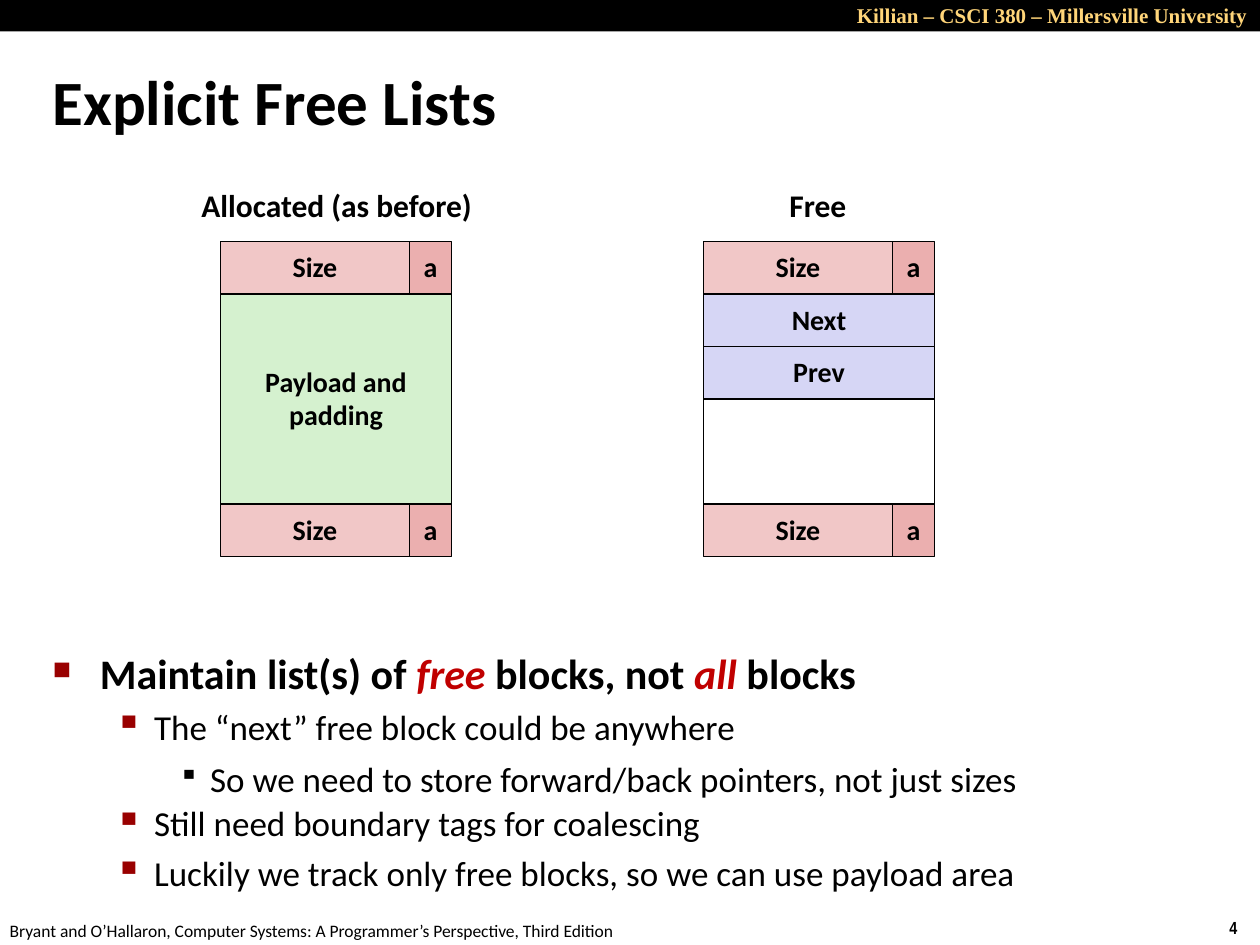
import pptx
import pptx.dml.color
import pptx.enum.shapes
import pptx.enum.text
import pptx.oxml.ns
import pptx.util
from lxml import etree

Pt = pptx.util.Pt
ALIGN = pptx.enum.text.PP_ALIGN
MIDDLE = pptx.enum.text.MSO_ANCHOR.MIDDLE

BLACK, RED, BULLET = "000000", "C00000", "990000"
PINK, ROSE, GREEN, LILAC, WHITE = "F1C7C7", "EBAFAF", "D5F1CF", "D6D6F5", "FFFFFF"


def color(value):
    return pptx.dml.color.RGBColor.from_string(value)


class SlideWriter:
    font = "Calibri"
    row, size_width, tag_width = 30, 108, 24

    def __init__(self, prs):
        self.slide = prs.slides.add_slide(prs.slide_layouts[6])

    def format_run(self, r, size, fill=BLACK, bold=False, italic=False, font=None):
        r.font.name = font or self.font
        r.font.size = Pt(size)
        r.font.bold = bold
        r.font.italic = italic
        r.font.color.rgb = color(fill)

    def box(self, x, y, w, h, fill, text="", outline=True):
        sp = self.slide.shapes.add_shape(
            pptx.enum.shapes.MSO_SHAPE.RECTANGLE, Pt(x), Pt(y), Pt(w), Pt(h))
        sp.shadow.inherit = False
        sp.fill.solid()
        sp.fill.fore_color.rgb = color(fill)
        if outline:
            sp.line.color.rgb = color(BLACK)
            sp.line.width = Pt(1)
        else:
            sp.line.fill.background()
        tf = sp.text_frame
        tf.text = text
        tf.word_wrap = False
        tf.vertical_anchor = MIDDLE
        for p in tf.paragraphs:
            p.alignment = ALIGN.CENTER
            p.line_spacing = 0.98
            for r in p.runs:
                self.format_run(r, 16, bold=True)

    def text(self, x, y, w, h, text, size, wrap=False, align=ALIGN.LEFT, **style):
        sp = self.slide.shapes.add_textbox(Pt(x), Pt(y), Pt(w), Pt(h))
        tf = sp.text_frame
        tf.text = text
        tf.word_wrap = wrap
        p = tf.paragraphs[0]
        p.alignment = align
        self.format_run(p.runs[0], size, **style)
        return tf

    def title(self, text):
        tf = self.text(23, 38, 478, 45, text, 36, wrap=True, bold=True)
        tf.vertical_anchor = MIDDLE
        tf.paragraphs[0].line_spacing = 0.87

    def bullet(self, p, level, spacing):
        char, size, fill, margin, hang = [
            ("■", 60, BULLET, 27, 27),
            ("▪", 110, BULLET, 58, 22.5),
            ("▪", 80, BLACK, 90, 18),
        ][level]
        p.level = level
        p.line_spacing = spacing
        p.space_before = Pt(4.8 if level == 0 else 4)
        pPr = p._p.get_or_add_pPr()
        pPr.set("marL", str(Pt(margin)))
        pPr.set("indent", str(-Pt(hang)))
        qn = pptx.oxml.ns.qn
        clr = etree.SubElement(pPr, qn("a:buClr"))
        etree.SubElement(clr, qn("a:srgbClr"), val=fill)
        etree.SubElement(pPr, qn("a:buSzPct"), val=str(size * 1000))
        etree.SubElement(pPr, qn("a:buChar"), char=char)

    def outline(self, x, y, w, h, items):
        tf = self.slide.shapes.add_textbox(Pt(x), Pt(y), Pt(w), Pt(h)).text_frame
        tf.word_wrap = True
        for i, (level, spacing, parts) in enumerate(items):
            p = tf.add_paragraph() if i else tf.paragraphs[0]
            self.bullet(p, level, spacing)
            for j, part in enumerate(parts):
                r = p.add_run()
                r.text = part
                stressed = j % 2 == 1
                self.format_run(r, 20 if level else 24, RED if stressed else BLACK,
                                bold=level == 0, italic=stressed)

    def memory_block(self, x, y, fields):
        def boundary(top):
            self.box(x, top, self.size_width, self.row, PINK, "Size")
            self.box(x + self.size_width, top, self.tag_width, self.row, ROSE, "a")

        boundary(y)
        y += self.row
        for text, rows, fill in fields:
            self.box(x, y, self.size_width + self.tag_width, rows * self.row, fill, text)
            y += rows * self.row
        boundary(y)


def main():
    prs = pptx.Presentation()
    prs.slide_width, prs.slide_height = Pt(720), Pt(540)
    s = SlideWriter(prs)

    s.box(0, 0, 720, 18, BLACK, outline=False)
    s.text(396, -2, 324, 22, "Killian – CSCI 380 – Millersville University", 12,
           wrap=True, align=ALIGN.RIGHT, fill="FFD579", bold=True, font="Times New Roman")
    s.text(695.5, 520.5, 24.5, 19.5, "4", 10, bold=True, font="Arial Narrow")
    s.text(-1.5, 522, 366, 19.5,
           "Bryant and O’Hallaron, Computer Systems: A Programmer’s Perspective, Third Edition", 10)

    s.title("Explicit Free Lists")
    s.outline(23, 371, 654.5, 145.5, [
        (0, 0.85, ["Maintain list(s) of ", "free", " blocks, not ", "all", " blocks"]),
        (1, 1.0, ["The “next” free block could be anywhere"]),
        (2, 1.07, ["So we need to store forward/back pointers, not just sizes"]),
        (1, 0.9, ["Still need boundary tags for coalescing"]),
        (1, 1.0, ["Luckily we track only free blocks, so we can use payload area"]),
    ])

    s.memory_block(126, 138, [("Payload and\npadding", 4, GREEN)])
    s.memory_block(402, 138, [("Next", 1, LILAC), ("Prev", 1, LILAC), ("", 2, WHITE)])
    s.text(108, 103, 170.5, 29, "Allocated (as before)", 18, bold=True)
    s.text(444, 102.5, 47.5, 29, "Free", 18, bold=True)

    prs.save("out.pptx")


if __name__ == "__main__":
    main()
